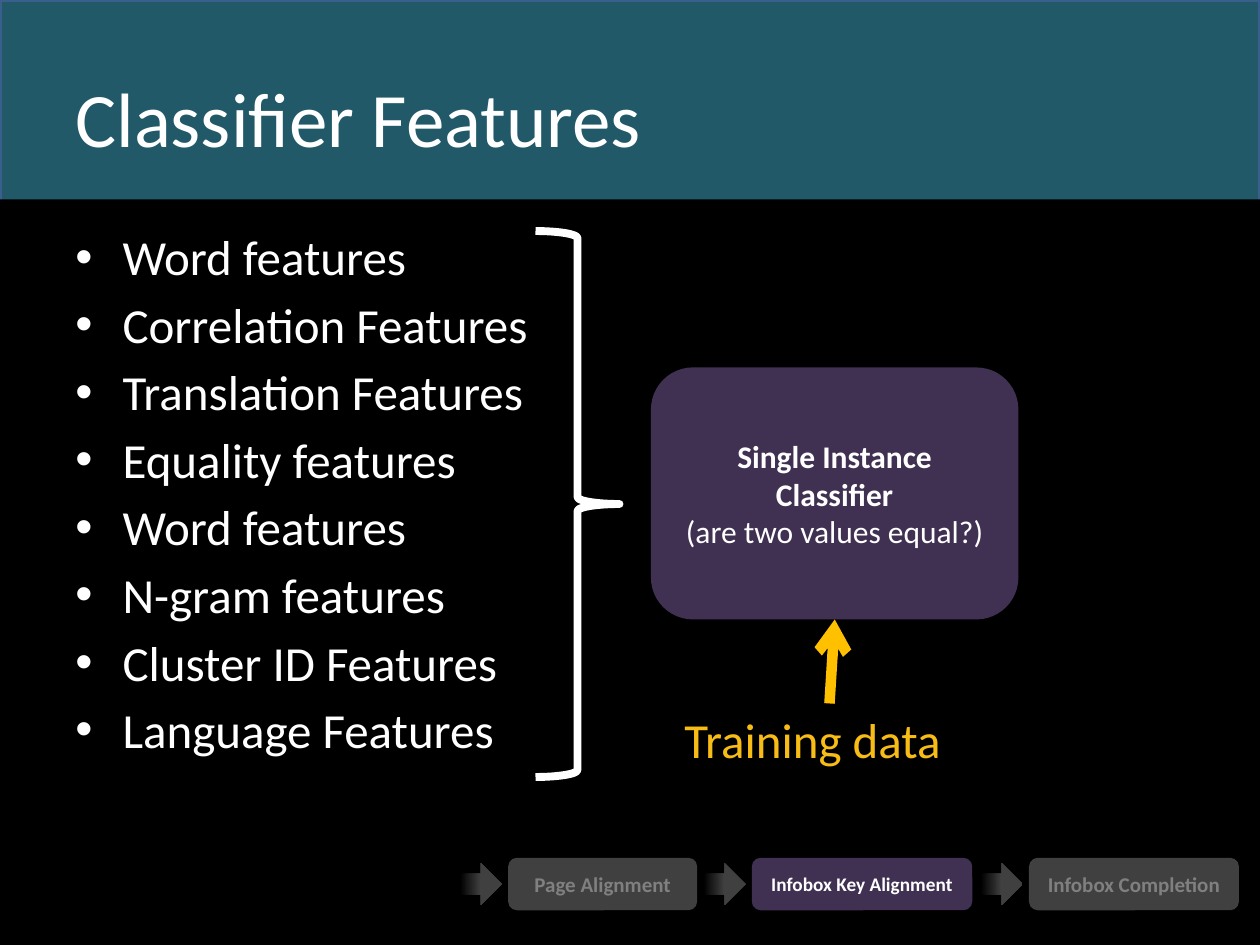
from lxml import etree
from pptx import Presentation
from pptx import util as u
from pptx.dml.color import RGBColor
from pptx.enum import shapes, text
from pptx.oxml import ns

PX = 7620  # EMU per px, 120 px to the inch
THEME = {
    "font": "Calibri", "teal": "215968", "border": "3A5F8C", "black": "000000",
    "white": "FFFFFF", "purple": "403152", "dim": "404040", "dim_text": "808080",
    "amber": "F7BC15", "arrow": "FFC000",
    "title": 44, "body": 28, "box": 18, "step": 12, "active_step": 11,
}
KIND = shapes.MSO_SHAPE


def color(name):
    return RGBColor.from_string(THEME[name])


def add_block(kind, left, top, width, height, fill=None, lines=(), size="body",
              ink="white", bold=False, align=text.PP_ALIGN.CENTER,
              anchor=text.MSO_ANCHOR.MIDDLE):
    """Add a borderless shape, filled if a colour is given, with one paragraph per line."""
    shape = slide.shapes.add_shape(kind, *(n * PX for n in (left, top, width, height)))
    shape.shadow.inherit = False
    shape.line.fill.background()
    if fill:
        shape.fill.solid()
        shape.fill.fore_color.rgb = color(fill)
    else:
        shape.fill.background()
    frame = shape.text_frame
    frame.word_wrap = True
    frame.vertical_anchor = anchor
    for index, line in enumerate(lines):
        paragraph = frame.add_paragraph() if index else frame.paragraphs[0]
        paragraph.text = line
        paragraph.alignment = align
        paragraph.font.name = THEME["font"]
        paragraph.font.size = u.Pt(THEME[size])
        paragraph.font.color.rgb = color(ink)
        paragraph.font.bold = bold
    return shape


presentation = Presentation()
presentation.slide_width, presentation.slide_height = 1200 * PX, 900 * PX
slide = presentation.slides.add_slide(presentation.slide_layouts[6])

# Teal header above a black body
header = add_block(KIND.RECTANGLE, 0, 0, 1200, 900, "teal")
header.line.color.rgb = color("border")
header.line.width = u.Pt(2)
add_block(KIND.RECTANGLE, 0, 190, 1200, 710, "black")
add_block(KIND.RECTANGLE, 60, 36, 1080, 150, lines=["Classifier Features"],
          size="title", align=text.PP_ALIGN.LEFT)

# Feature list
features = ["Word features", "Correlation Features", "Translation Features",
            "Equality features", "Word features", "N-gram features",
            "Cluster ID Features", "Language Features"]
feature_list = add_block(KIND.RECTANGLE, 60, 210, 1080, 594, lines=features,
                         align=text.PP_ALIGN.LEFT, anchor=text.MSO_ANCHOR.TOP)
for paragraph in feature_list.text_frame.paragraphs:
    paragraph.space_before = u.Pt(5)
    properties = paragraph._p.get_or_add_pPr()
    properties.set("marL", str(45 * PX))
    properties.set("indent", str(-45 * PX))
    etree.SubElement(properties, ns.qn("a:buFont"), typeface="Arial")
    etree.SubElement(properties, ns.qn("a:buChar"), char="•")
    # Bullet elements come before the default run properties
    properties.append(properties.find(ns.qn("a:defRPr")))

# Process steps, each led in by a fading arrow
steps = [
    ("Page Alignment", 484, 180, False),
    ("Infobox Key Alignment", 716, 210, True),
    ("Infobox Completion", 980, 200, False),
]
for label, left, width, active in steps:
    arrow = add_block(KIND.RIGHT_ARROW, left - 46, 822, 40, 40)
    arrow.fill.gradient()
    arrow.fill.gradient_angle = 0
    for stop, (position, shade) in zip(arrow.fill.gradient_stops,
                                       [(0, "black"), (0.5, "dim")]):
        stop.position = position
        stop.color.rgb = color(shade)
    add_block(KIND.ROUNDED_RECTANGLE, left, 817, width, 50,
              "purple" if active else "dim", [label],
              "active_step" if active else "step",
              "white" if active else "dim_text", bold=True)

# Classifier
classifier = add_block(KIND.ROUNDED_RECTANGLE, 620, 350, 350, 240, "purple",
                       ["Single Instance Classifier", "(are two values equal?)"], "box")
classifier.text_frame.paragraphs[0].font.bold = True

# Brace from the features to the classifier
brace = add_block(KIND.RIGHT_BRACE, 510, 220, 80, 520)
brace.line.color.rgb = color("white")
brace.line.width = u.Pt(4.5)

# Training data and its arrow
add_block(KIND.RECTANGLE, 640, 670, 300, 68, "black", ["Training data"], ink="amber",
          align=text.PP_ALIGN.LEFT, anchor=text.MSO_ANCHOR.TOP)
connector = slide.shapes.add_connector(
    shapes.MSO_CONNECTOR.STRAIGHT, 790 * PX, 670 * PX, 795 * PX, 590 * PX)
connector.line.color.rgb = color("arrow")
connector.line.width = u.Pt(6)
etree.SubElement(connector.line._get_or_add_ln(), ns.qn("a:tailEnd"), type="arrow")
etree.SubElement(connector._element.spPr, ns.qn("a:effectLst"))

presentation.save("out.pptx")
